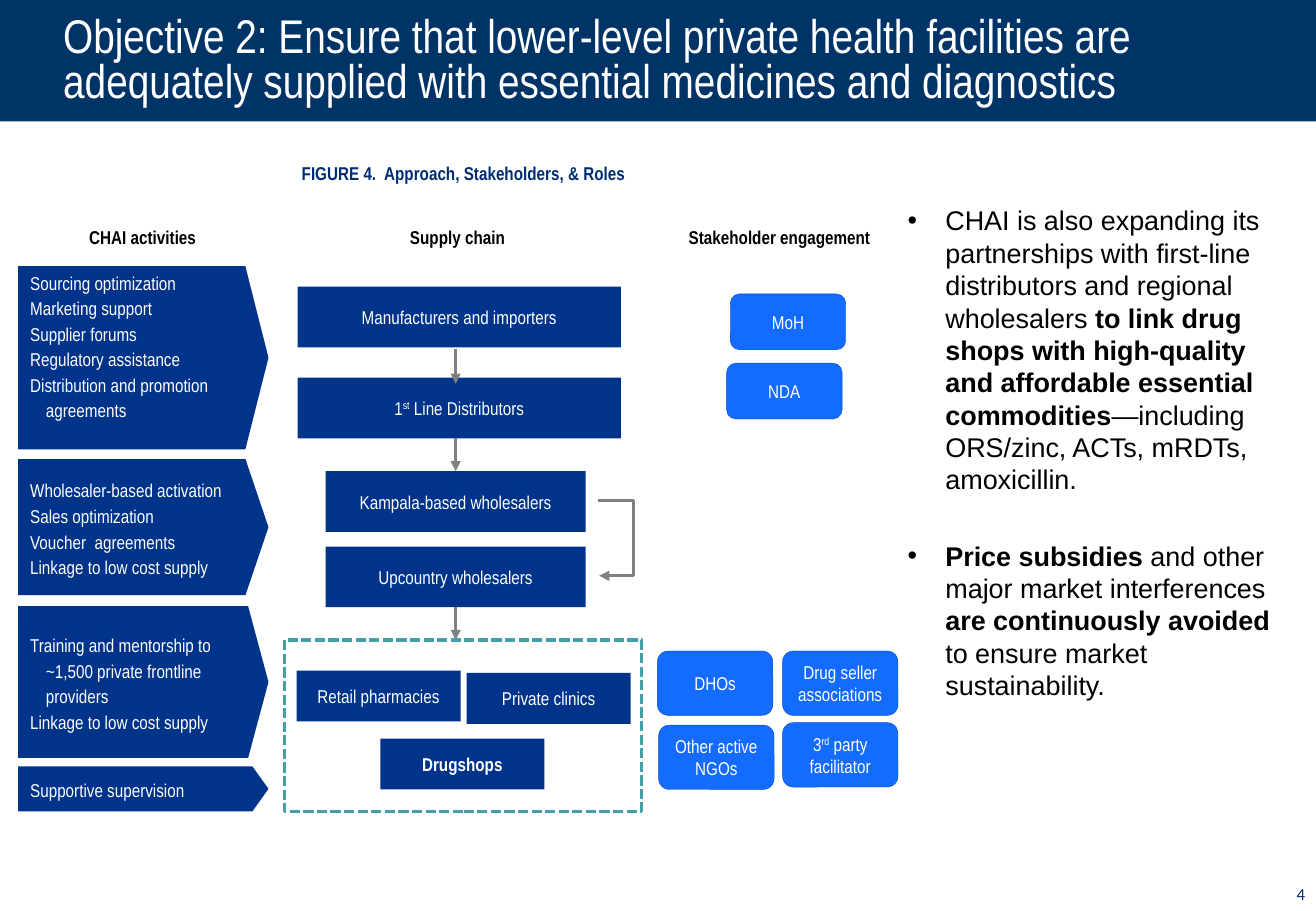
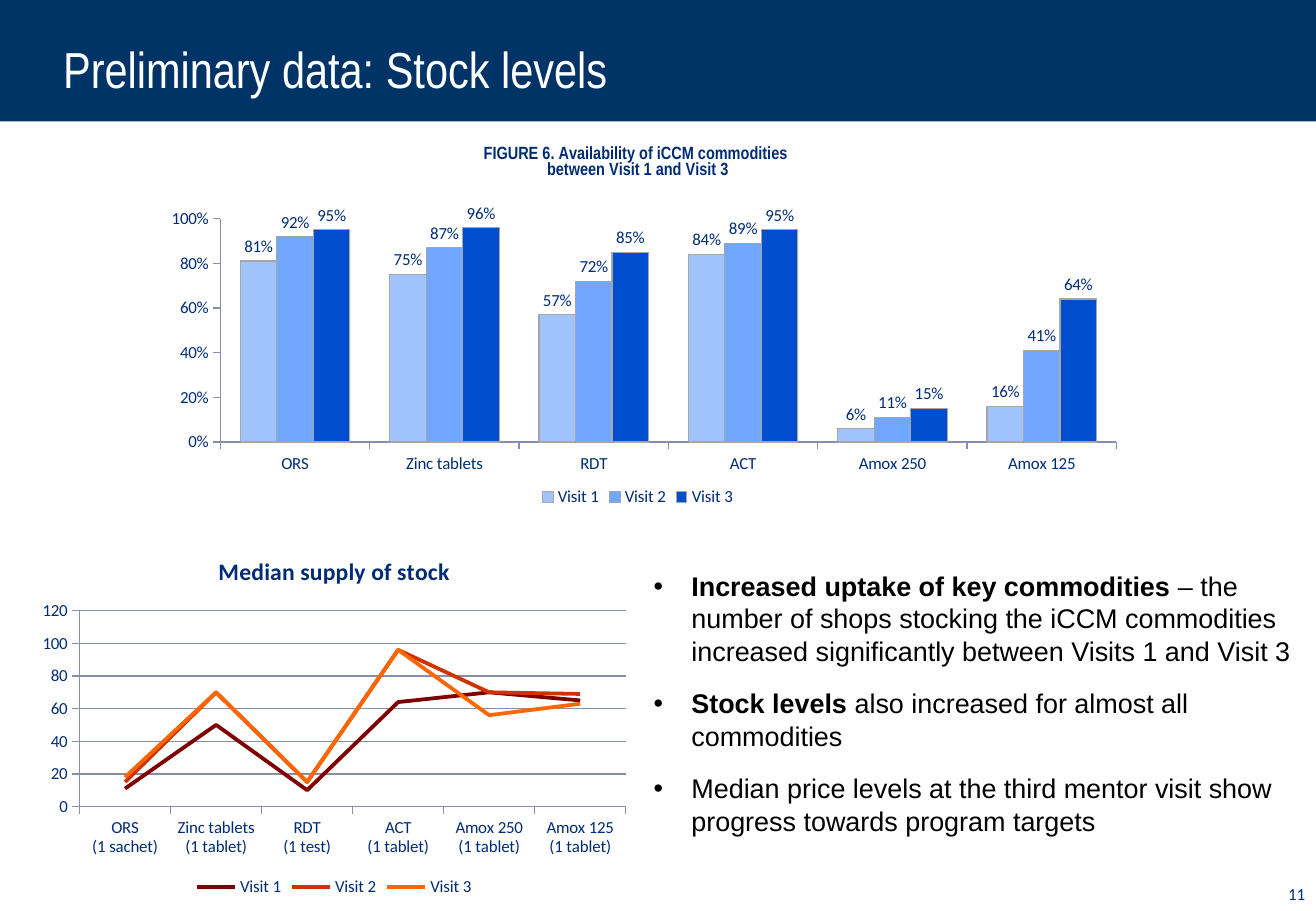
"""Build two slides on the supply of essential medicines: approach diagram and stock charts."""
from lxml import etree
from pptx import Presentation
from pptx.chart.data import CategoryChartData
from pptx.dml.color import RGBColor
from pptx.enum.chart import XL_CHART_TYPE as ChartType, XL_LABEL_POSITION as LabelPosition
from pptx.enum.chart import XL_LEGEND_POSITION as LegendPosition, XL_TICK_MARK as TickMark
from pptx.enum.dml import MSO_LINE as Dash
from pptx.enum.shapes import MSO_CONNECTOR as Connector, MSO_SHAPE as Shape
from pptx.enum.text import MSO_ANCHOR as Anchor, MSO_AUTO_SIZE as AutoSize, PP_ALIGN as Align
from pptx.oxml.ns import qn
from pptx.util import Pt

PX = 9144
COLORS = {
    "band": "003366", "navy": "00338A", "blue": "146CFF", "blue line": "004DCE",
    "ink": "002C76", "teal": "449FA6", "gray": "808080", "axis": "868EAB",
    "bar line": "A6A6A6", "white": "FFFFFF", "black": "000000",
}
COLORS = {name: RGBColor.from_string(value) for name, value in COLORS.items()}
NARROW = "Arial Narrow"


def write(frame, paragraphs, size=11, color="white", font=NARROW, bold=False,
          margins=(10, 5, 10, 5), anchor=Anchor.MIDDLE, hang=0, bullet=False, gap=0, **layout):
    """Fill a text frame; a run is a string or a (text, style) pair."""
    settings = dict(zip(("margin_left", "margin_top", "margin_right", "margin_bottom"),
                        (margin * PX for margin in margins)))
    settings.update(word_wrap=True, auto_size=AutoSize.NONE, vertical_anchor=anchor)
    for name, value in settings.items():
        setattr(frame, name, value)
    for index, runs in enumerate(paragraphs):
        paragraph = frame.add_paragraph() if index else frame.paragraphs[0]
        for name, value in layout.items():
            setattr(paragraph, name, value)
        if index and gap:
            paragraph.space_before = Pt(gap)
        properties = paragraph._p.get_or_add_pPr()
        if hang:
            properties.set("marL", str(hang * PX))
            properties.set("indent", str(-hang * PX))
        if bullet:
            etree.SubElement(properties, qn("a:buFont")).set("typeface", "Arial")
            etree.SubElement(properties, qn("a:buChar")).set("char", "•")
        for item in [runs] if isinstance(runs, str) else runs:
            text, style = (item, "") if isinstance(item, str) else item
            run = paragraph.add_run()
            run.text = text
            for name, value in dict(name=font, size=Pt(size), bold=bold or style == "bold").items():
                setattr(run.font, name, value)
            run.font.color.rgb = COLORS[color]
            if style == "super":
                run.font._element.set("baseline", "30000")


def add_box(slide, kind, rect, fill=None, line=None, width=1):
    """Add a flat preset shape at a px rectangle."""
    shape = slide.shapes.add_shape(kind, *(value * PX for value in rect))
    shape.shadow.inherit = False
    if fill:
        shape.fill.solid()
        shape.fill.fore_color.rgb = COLORS[fill]
    else:
        shape.fill.background()
    if line:
        shape.line.color.rgb = COLORS[line]
        shape.line.width = Pt(width)
    else:
        shape.line.fill.background()
    return shape


presentation = Presentation()
presentation.slide_width, presentation.slide_height = 1083 * PX, 750 * PX
title_only = presentation.slide_layouts[5]

pages = [
    ("Objective 2: Ensure that lower-level private health facilities are adequately supplied "
     "with essential medicines and diagnostics", 28, 28, 38, "4",
     (747, 168, 319, 520), dict(gap=26), [
         ["CHAI is also expanding its partnerships with first-line distributors and regional wholesalers ",
          ("to link drug shops with high-quality and affordable essential commodities", "bold"),
          "—including ORS/zinc, ACTs, mRDTs, amoxicillin."],
         [("Price subsidies ", "bold"), "and other major market interferences ",
          ("are continuously avoided ", "bold"), "to ensure market sustainability."],
     ]),
    ("Preliminary data: Stock levels", 30, 19, 2, "11",
     (538, 469, 545, 247), dict(gap=12), [
         [("Increased uptake of key commodities ", "bold"),
          "– the number of shops stocking the iCCM commodities increased significantly "
          "between Visits 1 and Visit 3"],
         [("Stock levels ", "bold"), "also increased for almost all commodities"],
         "Median price levels at the third mentor visit show progress towards program targets",
     ]),
]
slides = []
for title_text, title_size, title_top, title_bottom, number, body_rect, spacing, bullets in pages:
    slide = presentation.slides.add_slide(title_only)
    if not slides:
        band = add_box(slide, Shape.RECTANGLE, (0, 0, 1083, 100), "band")
        title_only.shapes._spTree.insert(2, band._element)
    slides.append(slide)
    title = slide.shapes.title
    title.left, title.top, title.width, title.height = (
        value * PX for value in (52, title_top, 980, 85))
    write(title.text_frame, [title_text], title_size, margins=(0, 0, 10, title_bottom),
          alignment=Align.LEFT, line_spacing=0.8)
    body = slide.shapes.add_textbox(*(value * PX for value in body_rect))
    write(body.text_frame, bullets, 16, "black", "Arial", margins=(0, 0, 0, 0),
          anchor=Anchor.TOP, hang=31, bullet=True, **spacing)
    page_number = slide.shapes.add_textbox(*(value * PX for value in (1034, 721, 50, 30)))
    write(page_number.text_frame, [number], 10, "ink", "Calibri", alignment=Align.RIGHT)

approach, stock = slides

for text, rect, color, line_spacing in [
    ("FIGURE 4.  Approach, Stakeholders, & Roles", (21, 126, 721, 67), "ink", 1.15),
    ("CHAI activities", (21, 181, 193, 40), "black", 1),
    ("Supply chain", (299, 181, 155, 48), "black", 1),
    ("Stakeholder engagement", (536, 181, 211, 48), "black", 1),
]:
    heading = approach.shapes.add_textbox(*(value * PX for value in rect))
    write(heading.text_frame, [text], color=color, bold=True, anchor=Anchor.TOP,
          alignment=Align.CENTER, line_spacing=line_spacing)

for top, height, point, bottom, activities in [
    (219, 151, 0.126, 26, ["Sourcing optimization", "Marketing support", "Supplier forums",
                           "Regulatory assistance", "Distribution and promotion agreements"]),
    (378, 112, 0.169, 5, ["Wholesaler-based activation", "Sales optimization",
                          "Voucher  agreements", "Linkage to low cost supply"]),
    (499, 125, 0.134, 5, ["Training and mentorship to ~1,500 private frontline providers",
                          "Linkage to low cost supply"]),
    (631, 37, 0.357, 5, ["Supportive supervision"]),
]:
    activity = add_box(approach, Shape.PENTAGON, (15, top, 206, height), "navy")
    activity.adjustments[0] = point
    write(activity.text_frame, activities, margins=(10, 5, 10, bottom), hang=13,
          alignment=Align.LEFT, line_spacing=1.15)

outlets = add_box(approach, Shape.RECTANGLE, (234, 527, 294, 141), line="teal", width=2)
outlets.line.dash_style = Dash.SQUARE_DOT

chain = {}
for name, rect, runs in [
    ("manufacturers", (245, 236, 266, 50), "Manufacturers and importers"),
    ("distributors", (245, 311, 266, 50), ["1", ("st", "super"), " Line Distributors"]),
    ("kampala", (268, 388, 214, 50), "Kampala-based wholesalers"),
    ("upcountry", (268, 450, 214, 50), "Upcountry wholesalers"),
    ("pharmacies", (244, 552, 135, 42), "Retail pharmacies"),
    ("clinics", (384, 554, 135, 42), "Private clinics"),
    ("drugshops", (313, 608, 135, 42), [("Drugshops", "bold")]),
]:
    chain[name] = add_box(approach, Shape.RECTANGLE, rect, "navy")
    write(chain[name].text_frame, [runs], alignment=Align.CENTER)

for left, top, height, runs in [
    (601, 242, 46, "MoH"),
    (598, 299, 46, "NDA"),
    (541, 536, 53, "DHOs"),
    (644, 536, 53, "Drug seller associations"),
    (542, 597, 53, "Other active NGOs"),
    (644, 595, 53, ["3", ("rd", "super"), " party facilitator"]),
]:
    stakeholder = add_box(approach, Shape.ROUNDED_RECTANGLE, (left, top, 95, height),
                          "blue", "blue line", 0.25)
    write(stakeholder.text_frame, [runs], margins=(0, 0, 0, 0), alignment=Align.CENTER)

for kind, ends, source, target in [
    (Connector.STRAIGHT, (375, 287, 375, 316), None, None),
    (Connector.STRAIGHT, (375, 361, 375, 388), None, "kampala"),
    (Connector.STRAIGHT, (375, 500, 375, 527), "upcountry", None),
    (Connector.ELBOW, (492, 412, 493, 474), None, None),
]:
    arrow = approach.shapes.add_connector(kind, *(value * PX for value in ends))
    if source:
        arrow.begin_connect(chain[source], 2)
    if target:
        arrow.end_connect(chain[target], 0)
    arrow.line.color.rgb = COLORS["gray"]
    arrow.line.width = Pt(2)
    etree.SubElement(arrow.line._get_or_add_ln(), qn("a:tailEnd")).set("type", "triangle")
    properties = arrow._element.spPr
    etree.SubElement(properties, qn("a:effectLst"))
    if kind == Connector.ELBOW:
        guide = etree.SubElement(properties.find(qn("a:prstGeom")).find(qn("a:avLst")), qn("a:gd"))
        guide.set("name", "adj1")
        guide.set("fmla", "val 3000000")

commodities = ["ORS", "Zinc tablets", "RDT", "ACT", "Amox 250", "Amox 125"]
units = ["sachet", "tablet", "test", "tablet", "tablet", "tablet"]
chart_specs = [
    (ChartType.COLUMN_CLUSTERED, (106, 104, 838, 317), commodities,
     ["FIGURE 6. Availability of iCCM commodities ", "between Visit 1 and Visit 3"], NARROW, 10.5,
     dict(minimum_scale=0, maximum_scale=1, major_unit=0.2), "0%",
     [("A1C4FF", (0.81, 0.75, 0.57, 0.84, 0.06, 0.16)),
      ("72A7FF", (0.92, 0.87, 0.72, 0.89, 0.11, 0.41)),
      ("004DCE", (0.95, 0.96, 0.85, 0.95, 0.15, 0.64))]),
    (ChartType.LINE, (25, 442, 500, 300),
     [f"{name}\n(1 {unit})" for name, unit in zip(commodities, units)],
     ["Median supply of stock"], "Calibri", 14,
     dict(minimum_scale=0, maximum_scale=120, major_unit=20), "General",
     [("800000", (11, 50, 10, 64, 70, 65)),
      ("CC3300", (15, 70, 15, 96, 70, 69)),
      ("FF6600", (18, 70, 15, 96, 56, 63))]),
]
for kind, rect, categories, title_lines, title_font, title_size, scale, number_format, rows in chart_specs:
    is_column = kind == ChartType.COLUMN_CLUSTERED
    data = CategoryChartData(number_format=number_format)
    data.categories = categories
    for visit, (_, values) in enumerate(rows, 1):
        data.add_series(f"Visit {visit}", values)
    chart = stock.shapes.add_chart(kind, *(value * PX for value in rect), data).chart
    for name, value in dict(name="Calibri", size=Pt(10)).items():
        setattr(chart.font, name, value)
    chart.font.color.rgb = COLORS["ink"]
    chart.has_title = True
    write(chart.chart_title.text_frame, title_lines, title_size, "ink", title_font, bold=True)
    chart.has_legend = True
    chart.legend.position = LegendPosition.BOTTOM
    chart.legend.include_in_layout = False

    for name, value in scale.items():
        setattr(chart.value_axis, name, value)
    chart.value_axis.has_major_gridlines = not is_column
    if not is_column:
        chart.value_axis.major_gridlines.format.line.color.rgb = COLORS["axis"]
    chart.value_axis.tick_labels.number_format = number_format
    chart.value_axis.tick_labels.number_format_is_linked = False
    for axis in (chart.category_axis, chart.value_axis):
        axis.major_tick_mark = TickMark.OUTSIDE
        axis.minor_tick_mark = TickMark.NONE
        axis.format.line.color.rgb = COLORS["axis"]

    plot = chart.plots[0]
    plot.vary_by_categories = False
    for series, (color, _) in zip(plot.series, rows):
        line = series.format.line
        if is_column:
            series.format.fill.solid()
            series.format.fill.fore_color.rgb = RGBColor.from_string(color)
            line.color.rgb = COLORS["bar line"]
            line.width = Pt(0.75)
        else:
            series.smooth = False
            line.color.rgb = RGBColor.from_string(color)
            line.width = Pt(2.25)
    if is_column:
        plot.gap_width, plot.overlap = 109, 0
        plot.has_data_labels = True
        for name, value in dict(show_value=True, number_format="0%", number_format_is_linked=False,
                                position=LabelPosition.OUTSIDE_END).items():
            setattr(plot.data_labels, name, value)
        plot_area = chart._chartSpace.chart.plotArea
        for old in plot_area.findall(qn("c:layout")):
            plot_area.remove(old)
        layout = etree.Element(qn("c:layout"))
        manual = etree.SubElement(layout, qn("c:manualLayout"))
        for tag, value in [("layoutTarget", "inner"), ("xMode", "edge"), ("yMode", "edge"),
                           ("x", "0.09"), ("y", "0.24"), ("w", "0.88"), ("h", "0.58")]:
            etree.SubElement(manual, qn(f"c:{tag}")).set("val", value)
        plot_area.insert(0, layout)

presentation.save("out.pptx")
